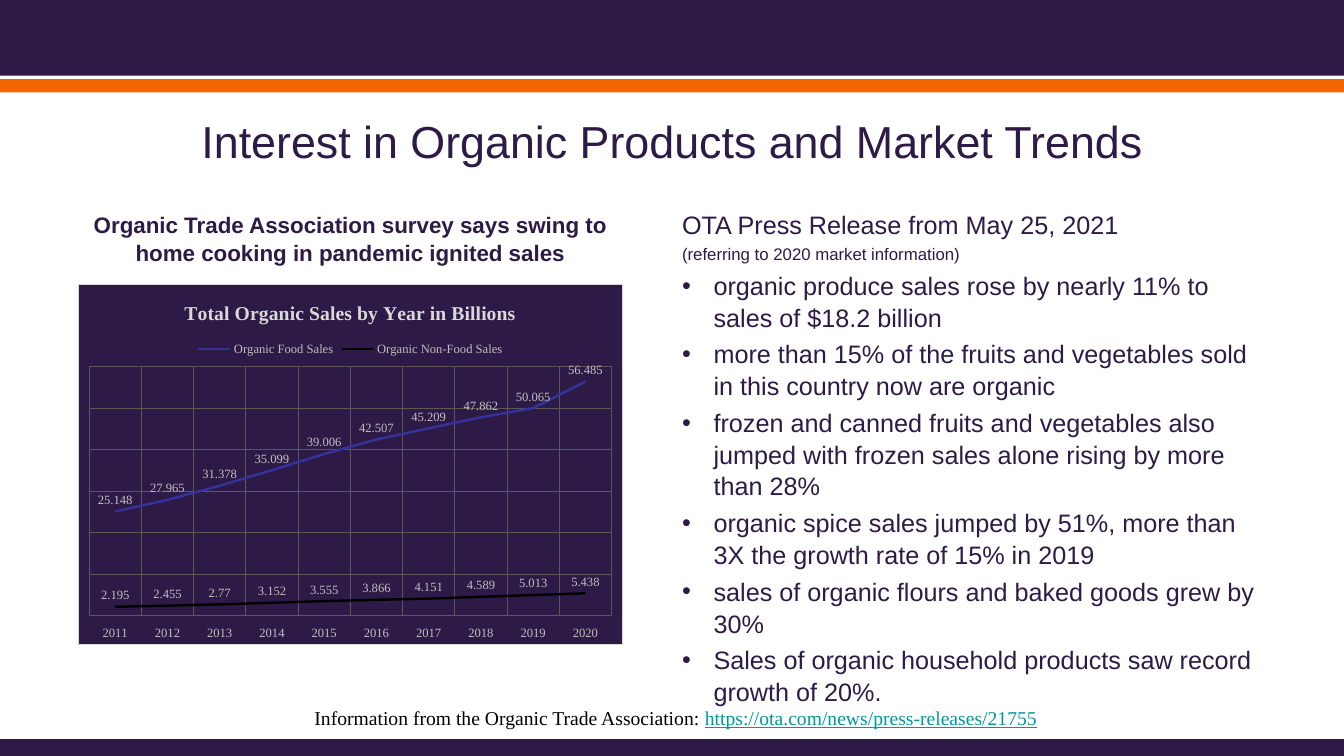
import pptx
import pptx.chart.data
import pptx.dml.color
import pptx.enum.chart
import pptx.enum.shapes
import pptx.enum.text
import pptx.oxml
import pptx.oxml.ns
import pptx.util

Pt = pptx.util.Pt
ALIGN = pptx.enum.text.PP_ALIGN
ANCHOR = pptx.enum.text.MSO_ANCHOR

PURPLE = "2E1A47"
ORANGE = "F56600"
GRID = "595959"
LABEL = "BFBFBF"
SANS = "Arial"
SERIF = "Times New Roman"

BULLETS = [
    "organic produce sales rose by nearly 11% to sales of $18.2 billion",
    "more than 15% of the fruits and vegetables sold in this country now are organic",
    "frozen and canned fruits and vegetables also jumped with frozen sales alone rising by more than 28%",
    "organic spice sales jumped by 51%, more than 3X the growth rate of 15% in 2019",
    "sales of organic flours and baked goods grew by 30%",
    "Sales of organic household products saw record growth of 20%.",
]
YEARS = [str(year) for year in range(2011, 2021)]
SALES = [
    ("Organic Food Sales", "333399",
     [25.148, 27.965, 31.378, 35.099, 39.006, 42.507, 45.209, 47.862, 50.065, 56.485]),
    ("Organic Non-Food Sales", "000000",
     [2.195, 2.455, 2.77, 3.152, 3.555, 3.866, 4.151, 4.589, 5.013, 5.438]),
]


def color(value):
    return pptx.dml.color.RGBColor.from_string(value)


def style(font, name, size, value, bold=False):
    font.name = name
    font.size = Pt(size)
    font.bold = bold
    font.color.rgb = color(value)


def add_run(para, text, name, size, value, bold=False):
    span = para.add_run()
    span.text = text
    style(span.font, name, size, value, bold)
    return span


def add_band(page, top, height, value):
    band = page.shapes.add_shape(
        pptx.enum.shapes.MSO_SHAPE.RECTANGLE, 0, Pt(top), Pt(960), Pt(height))
    band.shadow.inherit = False
    band.fill.solid()
    band.fill.fore_color.rgb = color(value)
    band.line.fill.background()


def place(box, left, top, width, height, anchor):
    box.left, box.top, box.width, box.height = Pt(left), Pt(top), Pt(width), Pt(height)
    frame = box.text_frame
    frame.word_wrap = True
    frame.auto_size = pptx.enum.text.MSO_AUTO_SIZE.NONE
    frame.vertical_anchor = anchor
    return frame


def set_bullet(para, symbol=None):
    props = para._p.get_or_add_pPr()
    indent = Pt(22.5) if symbol else 0
    props.set("marL", str(indent))
    props.set("indent", str(-indent))
    bullet = pptx.oxml.ns.qn("a:buChar" if symbol else "a:buNone")
    element = props.makeelement(bullet, {"char": symbol} if symbol else {})
    props.append(element)


def add_body_line(frame, text, size, symbol=None, bold=False, align=ALIGN.LEFT):
    first = not frame.paragraphs[0].runs
    para = frame.paragraphs[0] if first else frame.add_paragraph()
    set_bullet(para, symbol)
    para.alignment = align
    para.line_spacing = 1.05
    para.space_before = Pt(0 if first else size * 0.2)
    add_run(para, text, SANS, size, PURPLE, bold)


def add_chart_frame(chart):
    namespaces = pptx.oxml.ns.nsdecls("c", "a")
    chart._chartSpace.chart.addnext(pptx.oxml.parse_xml(
        f'<c:spPr {namespaces}><a:solidFill><a:srgbClr val="{PURPLE}"/></a:solidFill>'
        f'<a:ln w="{Pt(0.75)}"><a:solidFill><a:srgbClr val="D9D9D9"/></a:solidFill></a:ln>'
        '</c:spPr>'))
    plot_area = chart._chartSpace.chart.plotArea
    for old in plot_area.findall(pptx.oxml.ns.qn("c:layout")):
        plot_area.remove(old)
    sizes = "".join(f'<c:{key} val="{value}"/>' for key, value in
                    (("x", 0.02), ("y", 0.23), ("w", 0.96), ("h", 0.69)))
    plot_area.insert(0, pptx.oxml.parse_xml(
        f'<c:layout {namespaces}><c:manualLayout><c:layoutTarget val="inner"/>'
        f'<c:xMode val="edge"/><c:yMode val="edge"/>{sizes}</c:manualLayout></c:layout>'))


def add_sales_chart(page, left, top, width, height):
    data = pptx.chart.data.CategoryChartData()
    data.categories = YEARS
    for name, _, values in SALES:
        data.add_series(name, values)
    chart = page.shapes.add_chart(
        pptx.enum.chart.XL_CHART_TYPE.LINE,
        Pt(left), Pt(top), Pt(width), Pt(height), data).chart
    add_chart_frame(chart)
    style(chart.font, SERIF, 10, "000000")

    chart.has_title = True
    add_run(chart.chart_title.text_frame.paragraphs[0],
            "Total Organic Sales by Year in Billions", SERIF, 14, "D9D9D9", True)
    chart.has_legend = True
    chart.legend.position = pptx.enum.chart.XL_LEGEND_POSITION.TOP
    chart.legend.include_in_layout = False
    style(chart.legend.font, SERIF, 9, LABEL)

    for axis in (chart.category_axis, chart.value_axis):
        axis.has_major_gridlines = True
        axis.major_gridlines.format.line.color.rgb = color(GRID)
        axis.major_gridlines.format.line.width = Pt(0.75)
    chart.category_axis.format.line.fill.background()
    style(chart.category_axis.tick_labels.font, SERIF, 9, LABEL)
    chart.value_axis.minimum_scale = 0
    chart.value_axis.maximum_scale = 60
    chart.value_axis.major_unit = 10
    chart.value_axis.visible = False

    chart.plots[0].vary_by_categories = False
    for series, (_, value, _) in zip(chart.plots[0].series, SALES):
        series.smooth = False
        series.marker.style = pptx.enum.chart.XL_MARKER_STYLE.NONE
        series.format.line.color.rgb = color(value)
        series.format.line.width = Pt(1.75)
        labels = series.data_labels
        labels.show_value = True
        labels.position = pptx.enum.chart.XL_LABEL_POSITION.ABOVE
        style(labels.font, SERIF, 9, LABEL)


def main():
    deck = pptx.Presentation()
    deck.slide_width, deck.slide_height = Pt(960), Pt(540)
    page = deck.slides.add_slide(deck.slide_layouts[3])
    title, heading, release = page.placeholders

    for top, height, value in ((0, 54, PURPLE), (56.5, 9.5, ORANGE), (528, 12, PURPLE)):
        add_band(page, top, height, value)

    para = place(title, 24.5, 76.5, 912, 48, ANCHOR.MIDDLE).paragraphs[0]
    para.alignment = ALIGN.CENTER
    add_run(para, "Interest in Organic Products and Market Trends", SANS, 32, PURPLE)

    frame = place(heading, 55.5, 145.5, 389.5, 48, ANCHOR.BOTTOM)
    add_body_line(frame, "Organic Trade Association survey says swing to "
                  "home cooking in pandemic ignited sales", 16, bold=True, align=ALIGN.CENTER)

    frame = place(release, 480, 144.5, 433.5, 335, ANCHOR.TOP)
    add_body_line(frame, "OTA Press Release from May 25, 2021", 18)
    add_body_line(frame, "(referring to 2020 market information)", 12)
    for text in BULLETS:
        add_body_line(frame, text, 18, "•")

    add_sales_chart(page, 55.5, 202.5, 389.5, 258.5)

    box = page.shapes.add_textbox(0, 0, 0, 0)
    para = place(box, 217.5, 500.5, 539, 24.5, ANCHOR.TOP).paragraphs[0]
    add_run(para, "Information from the Organic Trade Association: ", SERIF, 14, "000000")
    address = add_run(para, "https://ota.com/news/press-releases/21755", SERIF, 14, "009999")
    address.font.underline = True

    deck.save("out.pptx")


if __name__ == "__main__":
    main()
